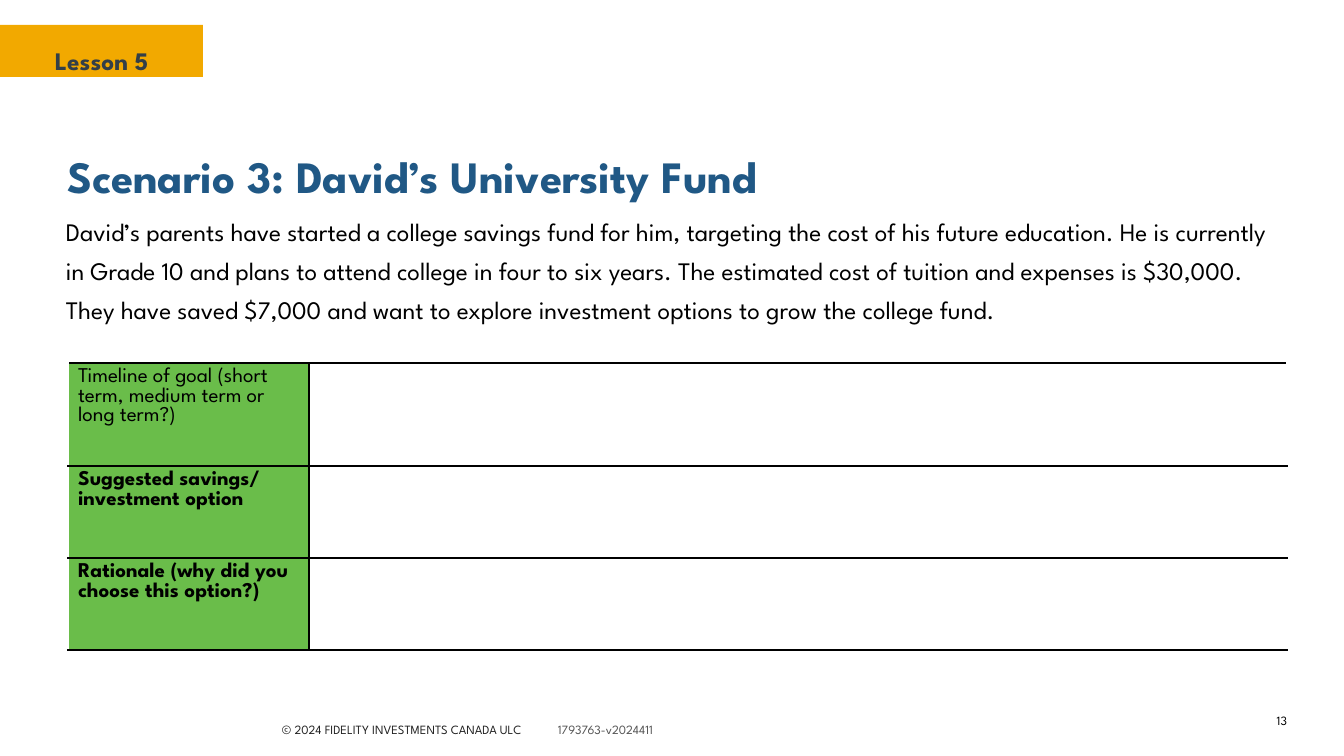
import pptx
import pptx.dml.color
import pptx.enum.shapes
import pptx.enum.text
import pptx.oxml
import pptx.oxml.ns
import pptx.util

RGBColor = pptx.dml.color.RGBColor
PP_ALIGN = pptx.enum.text.PP_ALIGN
MSO_ANCHOR = pptx.enum.text.MSO_ANCHOR

FONT = "League Spartan"
AMBER = RGBColor(0xF2, 0xA9, 0x00)
SLATE = RGBColor(0x33, 0x3F, 0x48)
BLUE = RGBColor(0x20, 0x58, 0x85)
GREEN = RGBColor(0x6A, 0xBD, 0x4A)
BLACK = RGBColor(0x00, 0x00, 0x00)
WHITE = RGBColor(0xFF, 0xFF, 0xFF)
INK = RGBColor(0x22, 0x22, 0x22)
GRAY = RGBColor(0x54, 0x54, 0x54)

STORY = (
    "David’s parents have started a college savings fund for him, targeting the cost "
    "of his future education. He is currently in Grade 10 and plans to attend college "
    "in four to six years. The estimated cost of tuition and expenses is $30,000. "
    "They have saved $7,000 and want to explore investment options to grow the "
    "college fund."
)
# Prompt text and whether it is bold
PROMPTS = [
    ("Timeline of goal (short term, medium term or long term?)", False),
    ("Suggested savings/\ninvestment option", True),
    ("Rationale (why did you choose this option?)", True),
]
COL_WIDTHS = [241, 978]
ROW_HEIGHTS = [103, 92, 92]


def px(n):
    return pptx.util.Emu(round(n * 914400 / 100.8))


def style_run(r, size, color, bold=False):
    r.font.name = FONT
    r.font.size = pptx.util.Pt(size)
    r.font.bold = bold
    r.font.color.rgb = color


def style_text(tf, size, color, bold=False, spacing=None, align=PP_ALIGN.LEFT):
    for p in tf.paragraphs:
        p.alignment = align
        p.line_spacing = spacing
        for r in p.runs:
            style_run(r, size, color, bold)


def add_text(slide, text, x, y, w, h):
    tf = slide.shapes.add_textbox(px(x), px(y), px(w), px(h)).text_frame
    tf.word_wrap = True
    tf.text = text
    return tf


def add_title(slide, text, x, y, w, h):
    sp = slide.shapes.title
    sp.left, sp.top, sp.width, sp.height = px(x), px(y), px(w), px(h)
    tf = sp.text_frame
    tf.text = text
    tf.auto_size = pptx.enum.text.MSO_AUTO_SIZE.NONE
    tf.vertical_anchor = MSO_ANCHOR.TOP
    style_text(tf, 32, BLUE, True, 1.3)


def add_lesson_tag(slide):
    sp = slide.shapes.add_shape(
        pptx.enum.shapes.MSO_SHAPE.RECTANGLE, 0, px(25), px(203), px(52))
    sp.shadow.inherit = False
    sp.fill.solid()
    sp.fill.fore_color.rgb = AMBER
    sp.line.fill.background()
    tf = add_text(slide, "Lesson 5", 45, 31, 132, 40)
    style_text(tf, 18, SLATE, True, 1.3)


def add_footer(slide):
    tf = add_text(slide, "© 2024 FIDELITY INVESTMENTS CANADA ULC", 272, 712, 433, 25)
    p = tf.paragraphs[0]
    # A tab stop sets the gap before the document number
    p._p.get_or_add_pPr().append(pptx.oxml.parse_xml(
        f'<a:tabLst {pptx.oxml.ns.nsdecls("a")}>'
        f'<a:tab pos="{px(276)}" algn="l"/></a:tabLst>'))
    p.add_run().text = "\t1793763-v2024411"
    style_text(tf, 9, INK, spacing=1.3)
    p.runs[1].font.color.rgb = GRAY


def add_page_number(slide, number):
    tf = add_text(slide, number, 1227, 712, 70, 18)
    tf.vertical_anchor = MSO_ANCHOR.MIDDLE
    style_text(tf, 9, BLACK, align=PP_ALIGN.RIGHT)


def set_borders(cell, **colors):
    tcPr = cell._tc.get_or_add_tcPr()
    for i, side in enumerate("LRTB"):
        tcPr.insert(i, pptx.oxml.parse_xml(
            f'<a:ln{side} {pptx.oxml.ns.nsdecls("a")} w="12700"><a:solidFill>'
            f'<a:srgbClr val="{colors.get(side, BLACK)}"/></a:solidFill></a:ln{side}>'))


def add_answer_table(slide, x, y):
    table = slide.shapes.add_table(
        len(PROMPTS), len(COL_WIDTHS), px(x), px(y),
        px(sum(COL_WIDTHS)), px(sum(ROW_HEIGHTS))).table
    table.first_row = table.horz_banding = False
    for col, width in zip(table.columns, COL_WIDTHS):
        col.width = px(width)
    for row, height, (text, bold) in zip(table.rows, ROW_HEIGHTS, PROMPTS):
        row.height = px(height)
        prompt, answer = row.cells
        prompt.text_frame.text = text
        style_text(prompt.text_frame, 15, BLACK, bold)
        prompt.fill.solid()
        prompt.fill.fore_color.rgb = GREEN
        answer.fill.background()
        set_borders(prompt, L=WHITE)
        set_borders(answer, R=WHITE)


def main():
    prs = pptx.Presentation()
    prs.slide_width, prs.slide_height = px(1344), px(756)
    slide = prs.slides.add_slide(prs.slide_layouts[5])

    # Header
    add_lesson_tag(slide)
    add_title(slide, "Scenario 3: David’s University Fund", 57, 128, 1230, 74)

    # Scenario and answer grid
    story = add_text(slide, STORY, 56, 202, 1230, 132)
    style_text(story, 18, BLACK, spacing=1.3)
    add_answer_table(slide, 68, 363)

    # Footer
    add_footer(slide)
    add_page_number(slide, "13")

    prs.save("out.pptx")


if __name__ == "__main__":
    main()
